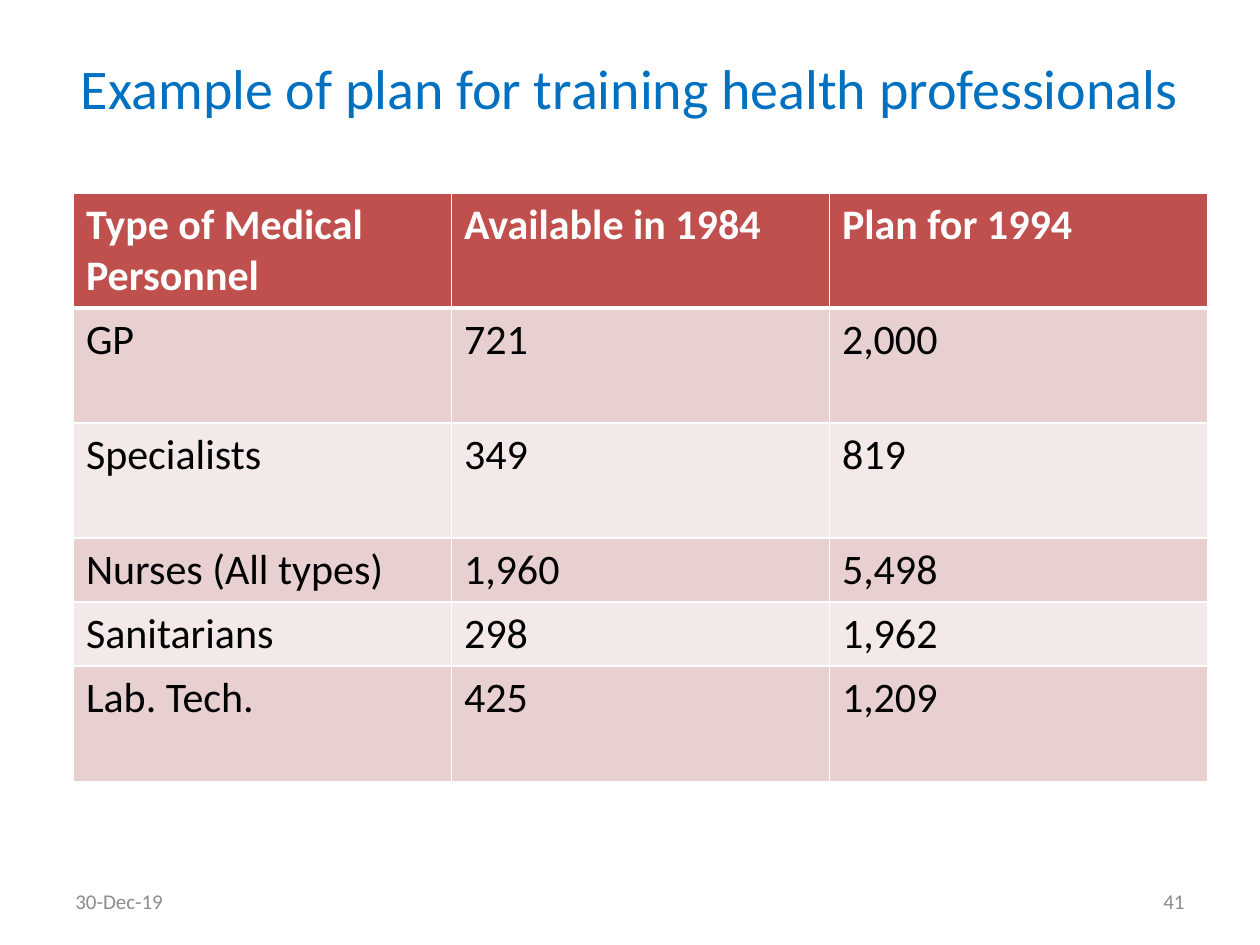
import pptx
import pptx.dml.color
import pptx.enum.text
import pptx.oxml
import pptx.oxml.ns
import pptx.util
from pptx.util import Cm

ALIGN = pptx.enum.text.PP_ALIGN
WHITE, BLACK, GREY, BLUE = "FFFFFF", "000000", "8C8C8C", "0070C0"
HEADER_FILL, BAND_FILLS = "C0504D", ("E8D0D0", "F4E9E9")

ROWS = [
    ("Type of Medical Personnel", "Available in 1984", "Plan for 1994"),
    ("GP", "721", "2,000"),
    ("Specialists", "349", "819"),
    ("Nurses (All types)", "1,960", "5,498"),
    ("Sanitarians", "298", "1,962"),
    ("Lab. Tech.", "425", "1,209"),
]
TALL, SHORT = 2.32, 1.29
ROW_HEIGHTS = (TALL, TALL, TALL, SHORT, SHORT, TALL)


def color(hex_value):
    return pptx.dml.color.RGBColor.from_string(hex_value)


def add_run(p, text, size, hex_value, bold=False):
    r = p.add_run()
    r.text = text
    r.font.name = "Calibri"
    r.font.size = pptx.util.Pt(size)
    r.font.bold = bold
    r.font.color.rgb = color(hex_value)


def add_text(s, box, text, size, hex_value, align):
    tf = s.shapes.add_textbox(*(Cm(v) for v in box)).text_frame
    tf.word_wrap = True
    tf.vertical_anchor = pptx.enum.text.MSO_ANCHOR.MIDDLE
    p = tf.paragraphs[0]
    p.alignment = align
    add_run(p, text, size, hex_value)


def set_borders(cell, **widths):
    """Draw white cell borders; widths are in points by side (L, R, T, B)."""
    tc_pr = cell._tc.get_or_add_tcPr()
    for side, width in widths.items():
        tc_pr.append(pptx.oxml.parse_xml(
            f'<a:ln{side} {pptx.oxml.ns.nsdecls("a")} w="{pptx.util.Pt(width)}">'
            f'<a:solidFill><a:srgbClr val="{WHITE}"/></a:solidFill></a:ln{side}>'))


def add_staff_table(s, left, top, width):
    table = s.shapes.add_table(len(ROWS), len(ROWS[0]), Cm(left), Cm(top),
                               Cm(width), Cm(sum(ROW_HEIGHTS))).table
    for column in table.columns:
        column.width = Cm(width / len(ROWS[0]))
    for i, (values, height) in enumerate(zip(ROWS, ROW_HEIGHTS)):
        table.rows[i].height = Cm(height)
        header = i == 0
        for j, value in enumerate(values):
            cell = table.cell(i, j)
            # A heavier rule separates the header from the body
            set_borders(cell, L=1, R=1, T=3 if i == 1 else 1, B=3 if header else 1)
            cell.fill.solid()
            cell.fill.fore_color.rgb = color(HEADER_FILL if header else BAND_FILLS[(i - 1) % 2])
            add_run(cell.text_frame.paragraphs[0], value, 24,
                    WHITE if header else BLACK, bold=header)


def add_footer(s, left, top, width, height):
    part = 5.92
    add_text(s, (left, top, part, height), "30-Dec-19", 12, GREY, ALIGN.LEFT)
    add_text(s, (left + width - part, top, part, height), "41", 12, GREY, ALIGN.RIGHT)


def main():
    prs = pptx.Presentation()
    prs.slide_width, prs.slide_height = Cm(25.4), Cm(19.05)
    s = prs.slides.add_slide(prs.slide_layouts[6])
    # Title
    add_text(s, (1.27, 0.76, 22.86, 1.98),
             "Example of plan for training health professionals", 32, BLUE, ALIGN.CENTER)
    # Personnel table
    add_staff_table(s, 1.48, 3.89, 22.86)
    # Date and slide number
    add_footer(s, 1.27, 17.65, 22.86, 1.02)
    prs.save("out.pptx")


if __name__ == "__main__":
    main()
